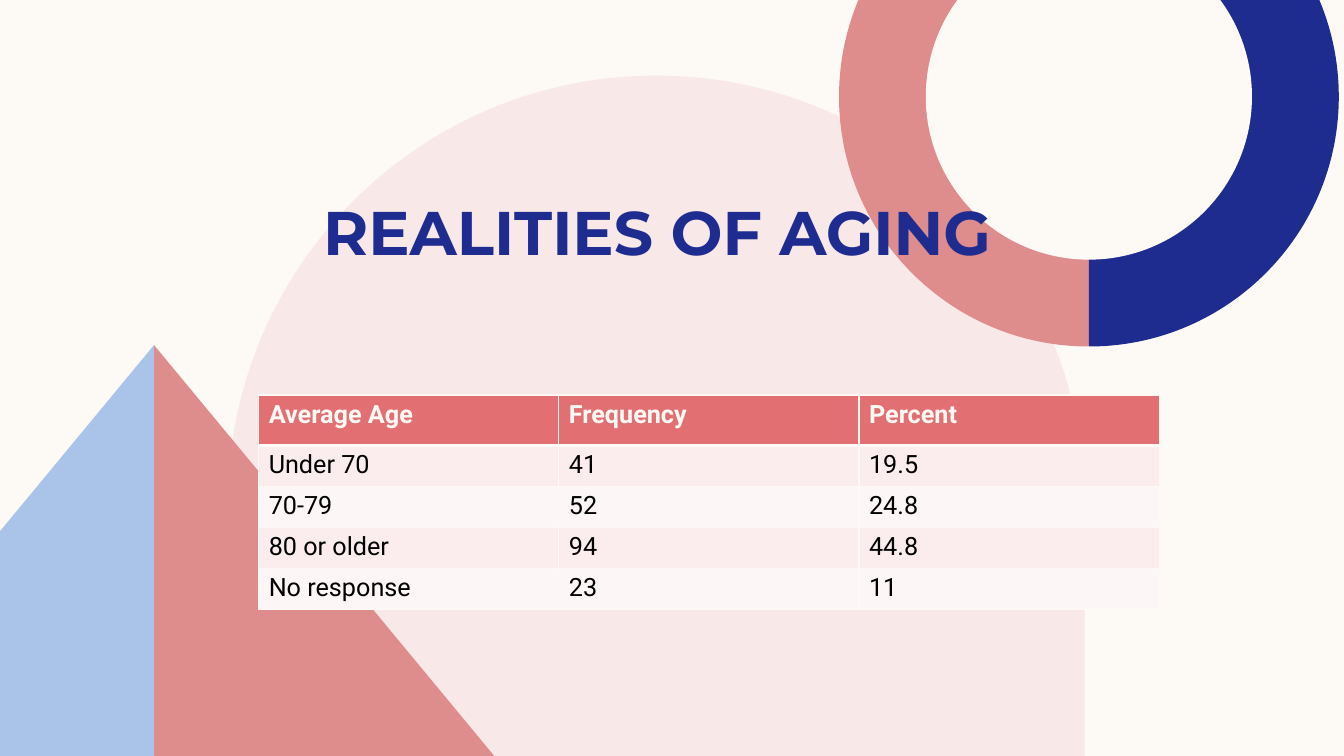
from math import asin, ceil, cos, degrees, radians, sin, tan

from lxml.etree import SubElement
from pptx import Presentation
from pptx.dml.color import RGBColor as RGB
from pptx.enum.text import MSO_ANCHOR as ANCHOR, PP_ALIGN as ALIGN
from pptx.oxml import parse_xml
from pptx.oxml.ns import nsdecls, qn
from pptx.util import Pt

# Content
TITLE = "REALITIES OF AGING"
ROWS = [
    ("Average Age", "Frequency", "Percent"),
    ("Under 70", "41", "19.5"),
    ("70-79", "52", "24.8"),
    ("80 or older", "94", "44.8"),
    ("No response", "23", "11"),
]

THEME = {
    "cream": "FDFAF6", "blush": "F8E8E8", "rose": "DE8C8C", "navy": "1F2C8F",
    "sky": "AAC3E8", "header": "E26F72", "bands": ("FBEDED", "FDF6F6"),
    "black": "000000", "title_font": "Montserrat", "body_font": "Roboto",
    "title_size": 44, "body_size": 18,
}

# Layout, in points
W, H = 960, 540
ARCH_X, ARCH_Y, ARCH_R = 468.7, 360, 306
RING_X, RING_Y, RING_R, HOLE_R = 777.8, 69, 178.5, 116.5
PEAK_X, PEAK_Y = 110, 246.5
TITLE_BOX = (217.5, 135, 504, 60.5)
TABLE_X, TABLE_Y, COL_W, HEAD_H, ROW_H = 184.8, 282.2, 214.4, 36, 29.3


# An outline is a list of segments: one point for a line, three for a curve
def arc(cx, cy, r, start, end):
    """Start point, then curves of a quarter turn at most, clockwise from the right."""
    def at(angle, offset=0):
        a = radians(angle)
        return (cx + r * (cos(a) - offset * sin(a)),
                cy + r * (sin(a) + offset * cos(a)))

    # Cut at whole quarter turns, so that the curves stay inside their bounds
    quarters = [q * 90 for q in range(ceil(start / 90), ceil(end / 90))]
    stops = [start] + [q for q in quarters if q > start] + [end]
    segments = [(at(start),)]
    for a, b in zip(stops, stops[1:]):
        k = 4 / 3 * tan(radians(b - a) / 4)
        segments.append((at(a, k), at(b, -k), at(b)))
    return segments


def ring_arc(r, start=None, end=None):
    """Arc about the ring's centre; an open end stops at the slide's top edge."""
    cut = degrees(asin(RING_Y / r))
    return arc(RING_X, RING_Y, r, -cut if start is None else start,
               180 + cut if end is None else end)


def lines(*points):
    return [(point,) for point in points]


def add_outline(s, segments, color):
    pts = [(Pt(x), Pt(y)) for segment in segments for x, y in segment]
    builder = s.shapes.build_freeform(*pts[0], scale=1.0)
    builder.add_line_segments(pts[1:], close=True)
    sp = builder.convert_to_shape()
    sp.shadow.inherit = False
    sp.fill.solid()
    sp.fill.fore_color.rgb = RGB.from_string(color)
    sp.line.fill.background()

    # Join the three steps of each curve into one
    steps = iter(list(sp._element.iter(qn("a:lnTo"))))
    for segment in segments[1:]:
        first, *rest = [next(steps) for _ in segment]
        if rest:
            first.tag = qn("a:cubicBezTo")
            for step in rest:
                first.append(step[0])
                step.getparent().remove(step)


def write(tf, text, color, **font):
    p = tf.paragraphs[0]
    r = p.add_run()
    r.text = text
    for name, value in font.items():
        setattr(r.font, name, value)
    r.font.color.rgb = RGB.from_string(color)
    return p


def set_borders(cell, widths):
    """Cell borders go ahead of the fill, in the order left, right, top, bottom."""
    tc_pr = cell._tc.get_or_add_tcPr()
    for i, (side, width) in enumerate(zip("LRTB", widths)):
        ln = parse_xml(f'<a:ln{side} {nsdecls("a")} w="{Pt(width)}"/>')
        fill = SubElement(ln, qn("a:solidFill"))
        SubElement(fill, qn("a:srgbClr"), val=THEME["cream"])
        tc_pr.insert(i, ln)


def add_ages_table(s):
    n_rows, n_cols = len(ROWS), len(ROWS[0])
    height = HEAD_H + ROW_H * (n_rows - 1)
    table = s.shapes.add_table(n_rows, n_cols, Pt(TABLE_X), Pt(TABLE_Y),
                               Pt(COL_W * n_cols), Pt(height)).table
    for col in table.columns:
        col.width = Pt(COL_W)
    for i, row in enumerate(ROWS):
        head = i == 0
        table.rows[i].height = Pt(HEAD_H if head else ROW_H)
        for j, text in enumerate(row):
            cell = table.cell(i, j)
            cell.fill.solid()
            fill = THEME["header"] if head else THEME["bands"][(i - 1) % 2]
            cell.fill.fore_color.rgb = RGB.from_string(fill)
            set_borders(cell, (1, 1, 3 if i == 1 else 1, 3 if head else 1))
            write(cell.text_frame, text, THEME["cream" if head else "black"],
                  name=THEME["body_font"], size=Pt(THEME["body_size"]), bold=head)


def main():
    prs = Presentation()
    prs.slide_width, prs.slide_height = Pt(W), Pt(H)
    s = prs.slides.add_slide(prs.slide_layouts[6])
    s.background.fill.solid()
    s.background.fill.fore_color.rgb = RGB.from_string(THEME["cream"])

    # Arch, ring and mountain, from back to front
    arch = arc(ARCH_X, ARCH_Y, ARCH_R, 180, 360)
    arch += lines((ARCH_X + ARCH_R, H), (ARCH_X - ARCH_R, H))
    ring_top = lines((RING_X, 0))
    outlines = [
        (arch, "blush"),
        (ring_arc(RING_R, start=90) + ring_top, "rose"),
        (ring_arc(RING_R, end=90) + ring_top, "navy"),
        (ring_arc(HOLE_R), "cream"),
        (lines((PEAK_X, PEAK_Y), (353, H), (PEAK_X, H)), "rose"),
        (lines((PEAK_X, PEAK_Y), (PEAK_X, H), (0, H), (0, 379.5)), "sky"),
    ]
    for segments, color in outlines:
        add_outline(s, segments, THEME[color])

    # Title
    tf = s.shapes.add_textbox(*map(Pt, TITLE_BOX)).text_frame
    tf.word_wrap = True
    tf.vertical_anchor = ANCHOR.MIDDLE
    p = write(tf, TITLE, THEME["navy"], name=THEME["title_font"],
              size=Pt(THEME["title_size"]), bold=True)
    p.alignment = ALIGN.CENTER

    # Table
    add_ages_table(s)
    prs.save("out.pptx")


if __name__ == "__main__":
    main()
